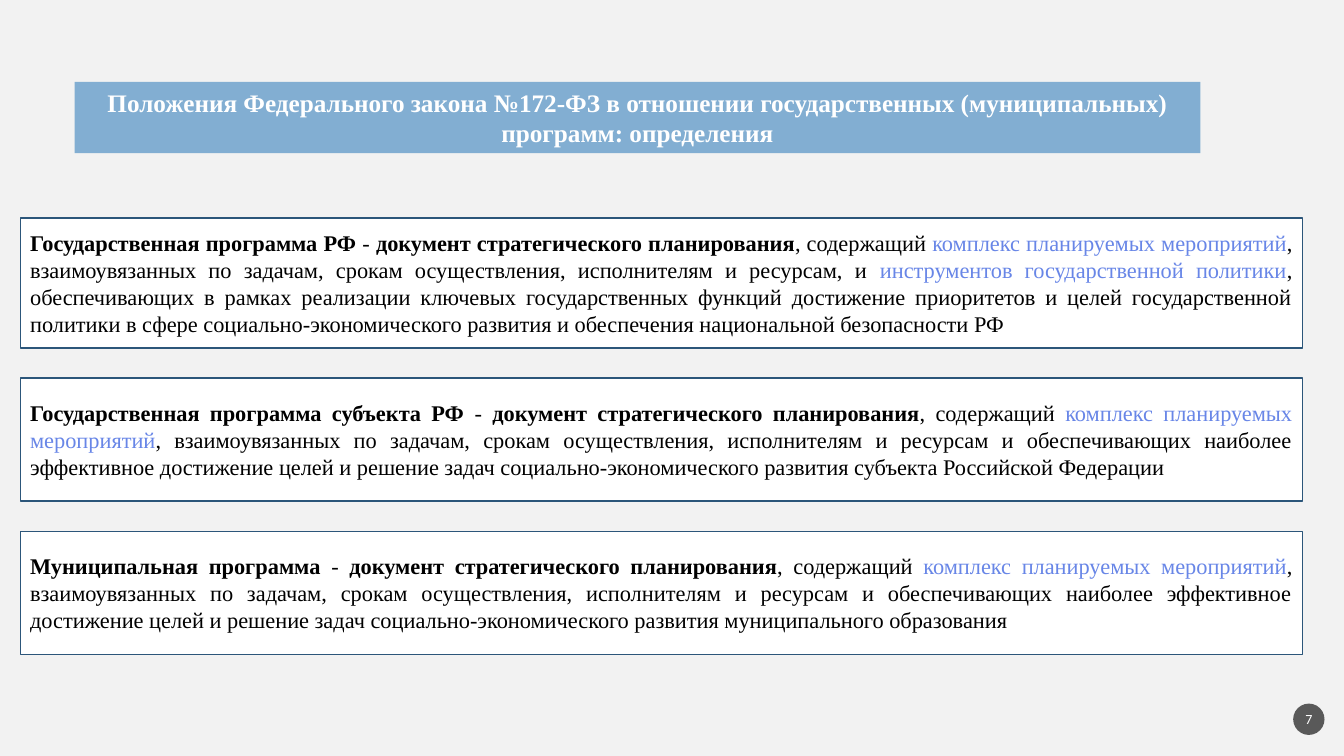
from dataclasses import dataclass

from pptx import Presentation
from pptx.dml.color import RGBColor
from pptx.enum.shapes import MSO_SHAPE
from pptx.enum.text import MSO_ANCHOR, MSO_AUTO_SIZE, PP_ALIGN
from pptx.util import Cm, Pt

RECTANGLE, OVAL = MSO_SHAPE.RECTANGLE, MSO_SHAPE.OVAL
MIDDLE = MSO_ANCHOR.MIDDLE
NO_AUTOFIT = MSO_AUTO_SIZE.NONE
CENTER, JUSTIFY = PP_ALIGN.CENTER, PP_ALIGN.JUSTIFY

COLORS = {
    "background": "F2F2F2",
    "banner": "82AED2",
    "border": "2C567A",
    "accent": "6886E7",
    "badge": "595959",
    "white": "FFFFFF",
    "black": "000000",
}
SERIF, SANS = "Times New Roman", "Calibri"
BOX_LEFT, BOX_WIDTH = 0.51, 32.31
TITLE_ONLY_LAYOUT = 5


@dataclass
class Span:
    text: str
    color: str = "black"
    bold: bool = False


@dataclass
class Definition:
    term: str
    top: float
    height: float
    details: list[Span]


SHARED_DETAILS = (
    ", взаимоувязанных по задачам, срокам осуществления, исполнителям и ресурсам"
)
SHARED_GOALS = (
    " и обеспечивающих наиболее эффективное достижение целей и решение задач "
    "социально-экономического развития "
)

DEFINITIONS = [
    Definition("Государственная программа РФ", 5.49, 3.28, [
        Span(SHARED_DETAILS + ", и "),
        Span("инструментов государственной политики", "accent"),
        Span(
            ", обеспечивающих в рамках реализации ключевых государственных функций "
            "достижение приоритетов и целей государственной политики в сфере "
            "социально-экономического развития и обеспечения национальной "
            "безопасности РФ"
        ),
    ]),
    Definition("Государственная программа субъекта РФ", 9.53, 3.1, [
        Span(SHARED_DETAILS + SHARED_GOALS + "субъекта Российской Федерации"),
    ]),
    Definition("Муниципальная программа", 13.39, 3.1, [
        Span(SHARED_DETAILS + SHARED_GOALS + "муниципального образования"),
    ]),
]


def rgb(name: str) -> RGBColor:
    return RGBColor.from_string(COLORS[name])


def add_text(para, text: str, *, font: str, size: float, color: str,
             bold: bool = False) -> None:
    span = para.add_run()
    span.text = text
    span.font.name = font
    span.font.size = Pt(size)
    span.font.bold = bold
    span.font.color.rgb = rgb(color)


def prepare_paragraph(box, alignment):
    frame = box.text_frame
    frame.word_wrap = True
    frame.auto_size = NO_AUTOFIT
    frame.vertical_anchor = MIDDLE
    para = frame.paragraphs[0]
    para.alignment = alignment
    para.line_spacing = 1.0
    para.space_before = Pt(0)
    return para


def add_box(page, kind, left: float, top: float, width: float, height: float,
            fill: str, border: str | None = None):
    box = page.shapes.add_shape(kind, Cm(left), Cm(top), Cm(width), Cm(height))
    box.shadow.inherit = False
    box.fill.solid()
    box.fill.fore_color.rgb = rgb(fill)
    if border:
        box.line.color.rgb = rgb(border)
        box.line.width = Pt(1)
    else:
        box.line.fill.background()
    return box


def add_definition(page, definition: Definition) -> None:
    box = add_box(page, RECTANGLE, BOX_LEFT, definition.top, BOX_WIDTH,
                  definition.height, "white", "border")
    para = prepare_paragraph(box, JUSTIFY)
    spans = [
        Span(definition.term + " ", bold=True),
        Span("- "),
        Span("документ стратегического планирования", bold=True),
        Span(", содержащий "),
        Span("комплекс планируемых мероприятий", "accent"),
        *definition.details,
    ]
    for span in spans:
        add_text(para, span.text, font=SERIF, size=16, color=span.color,
                 bold=span.bold)


def add_title(page) -> None:
    title = page.shapes.title
    title.left, title.top = Cm(1.88), Cm(2.06)
    title.width, title.height = Cm(28.37), Cm(1.8)
    title.fill.solid()
    title.fill.fore_color.rgb = rgb("banner")
    add_text(
        prepare_paragraph(title, CENTER),
        "Положения Федерального закона №172-ФЗ в отношении государственных "
        "(муниципальных) программ: определения",
        font=SERIF, size=18, color="white", bold=True,
    )


def add_page_number(page, number: int) -> None:
    badge = add_box(page, OVAL, 32.59, 17.73, 0.79, 0.79, "badge")
    frame = badge.text_frame
    frame.margin_left = frame.margin_right = Cm(0)
    frame.margin_top = frame.margin_bottom = Cm(0)
    add_text(prepare_paragraph(badge, CENTER), str(number),
             font=SANS, size=10, color="white")


def main() -> None:
    deck = Presentation()
    deck.slide_width, deck.slide_height = Cm(33.87), Cm(19.05)
    page = deck.slides.add_slide(deck.slide_layouts[TITLE_ONLY_LAYOUT])
    page.background.fill.solid()
    page.background.fill.fore_color.rgb = rgb("background")

    # Heading banner
    add_title(page)

    # Programme definitions
    for definition in DEFINITIONS:
        add_definition(page, definition)

    # Page number badge
    add_page_number(page, 7)

    deck.save("out.pptx")


if __name__ == "__main__":
    main()
